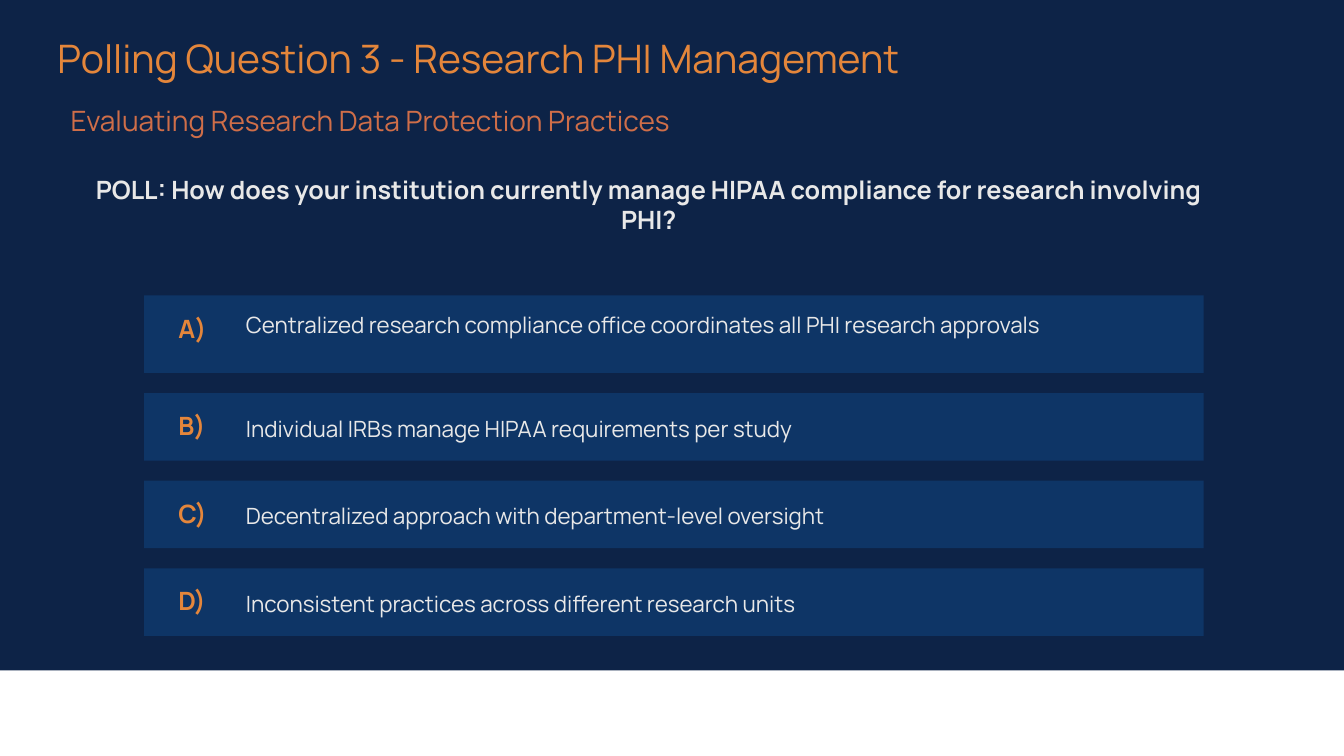
from dataclasses import dataclass

import pptx
import pptx.dml.color
import pptx.enum.text
import pptx.util

Pt = pptx.util.Pt
Align = pptx.enum.text.PP_ALIGN
AutoSize = pptx.enum.text.MSO_AUTO_SIZE

COLORS = {
    "navy": "0D2347",
    "bar": "0E3566",
    "orange": "E4863B",
    "rust": "CF6E49",
    "light": "E8E8E8",
}
FONT = "Manrope"
GAP = 14.4
BAR_LEFT, BAR_WIDTH = 103, 756.7
LETTER_LEFT, LETTER_WIDTH = 127.4, 30.2
ANSWER_LEFT = 175.7


@dataclass
class Box:
    left: float
    top: float
    width: float
    height: float


@dataclass
class Style:
    size: float
    color: str
    bold: bool = False
    align: Align = Align.LEFT
    auto_size: AutoSize = AutoSize.NONE


@dataclass
class Option:
    letter: str
    answer: str
    answer_width: float
    height: float = 48.2
    letter_height: float = 21.6
    answer_height: float = 18.7
    letter_drop: float = 12.2
    answer_drop: float = 15.6


LETTER = Style(18, "orange", bold=True)
ANSWER = Style(16, "light")
TITLE = Style(28, "orange", auto_size=AutoSize.SHAPE_TO_FIT_TEXT)
SUBTITLE = Style(20, "rust", auto_size=AutoSize.SHAPE_TO_FIT_TEXT)
QUESTION = Style(18, "light", True, Align.CENTER, AutoSize.SHAPE_TO_FIT_TEXT)

OPTIONS = [
    Option("A)", "Centralized research compliance office coordinates all PHI research approvals",
           630.7, height=55.4, letter_height=16.6, answer_height=31,
           letter_drop=13, answer_drop=11.5),
    Option("B)", "Individual IRBs manage HIPAA requirements per study", 506.9),
    Option("C)", "Decentralized approach with department-level oversight", 529.9),
    Option("D)", "Inconsistent practices across different research units", 489.6),
]


def rgb(name: str) -> pptx.dml.color.RGBColor:
    return pptx.dml.color.RGBColor.from_string(COLORS[name])


def place(box: Box) -> tuple:
    return Pt(box.left), Pt(box.top), Pt(box.width), Pt(box.height)


def add_bar(shapes, box: Box, color: str):
    sp = shapes.add_shape(pptx.enum.shapes.MSO_SHAPE.RECTANGLE, *place(box))
    sp.shadow.inherit = False
    sp.fill.solid()
    sp.fill.fore_color.rgb = rgb(color)
    sp.line.fill.background()
    return sp


def write(sp, text: str, style: Style) -> None:
    tf = sp.text_frame
    frame = {
        "margin_left": 0, "margin_top": 0, "margin_right": 0, "margin_bottom": 0,
        "word_wrap": True,
        "auto_size": style.auto_size,
        "vertical_anchor": pptx.enum.text.MSO_ANCHOR.TOP,
    }
    for name, value in frame.items():
        setattr(tf, name, value)
    p = tf.paragraphs[0]
    p.alignment = style.align
    r = p.add_run()
    r.text = text
    font = {"name": FONT, "size": Pt(style.size), "bold": style.bold}
    for name, value in font.items():
        setattr(r.font, name, value)
    r.font.color.rgb = rgb(style.color)


def add_text(shapes, box: Box, text: str, style: Style) -> None:
    write(shapes.add_textbox(*place(box)), text, style)


def add_option(s, option: Option, top: float) -> None:
    shapes = s.shapes.add_group_shape().shapes
    add_bar(shapes, Box(BAR_LEFT, top, BAR_WIDTH, option.height), "bar")
    add_text(shapes, Box(LETTER_LEFT, top + option.letter_drop,
                         LETTER_WIDTH, option.letter_height), option.letter, LETTER)
    add_text(shapes, Box(ANSWER_LEFT, top + option.answer_drop,
                         option.answer_width, option.answer_height), option.answer, ANSWER)


def add_title(s, box: Box, text: str) -> None:
    title = s.shapes.title
    for name, value in zip(("left", "top", "width", "height"), place(box)):
        setattr(title, name, value)
    write(title, text, TITLE)


def main() -> None:
    prs = pptx.Presentation()
    prs.slide_width, prs.slide_height = Pt(960), Pt(540)
    s = prs.slides.add_slide(prs.slide_layouts[5])

    panel = add_bar(s.shapes, Box(0, 0, 960, 478.8), "navy")
    s.shapes.title.element.addprevious(panel.element)
    add_title(s, Box(41, 24.5, 751, 33.8), "Polling Question 3 - Research PHI Management")
    add_text(s.shapes, Box(50.4, 74.2, 700.6, 24.5),
             "Evaluating Research Data Protection Practices", SUBTITLE)
    add_text(s.shapes, Box(56.9, 124.6, 812.9, 43.9),
             "POLL: How does your institution currently manage HIPAA compliance "
             "for research involving PHI?", QUESTION)

    top = 211
    for option in OPTIONS:
        add_option(s, option, top)
        top += option.height + GAP

    prs.save("out.pptx")


if __name__ == "__main__":
    main()
